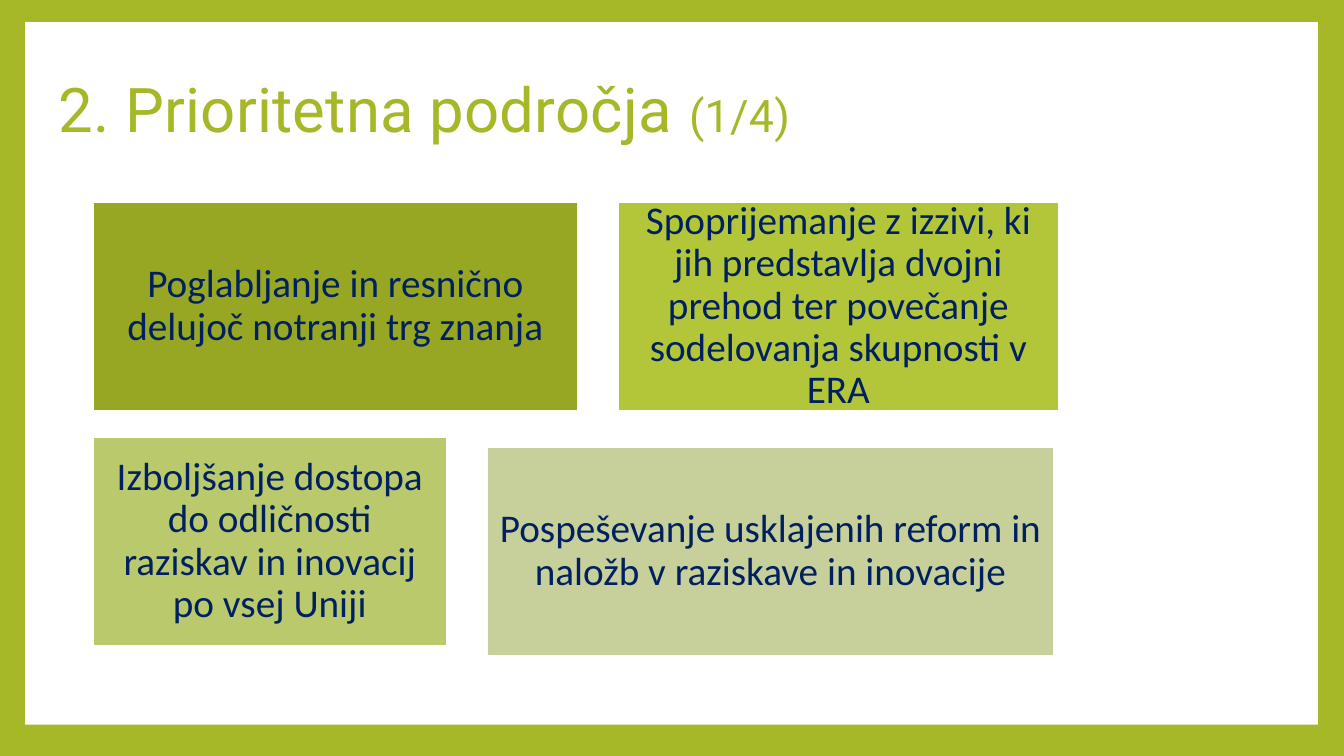
from pptx import Presentation
from pptx.dml.color import RGBColor
from pptx.enum.shapes import MSO_SHAPE
from pptx.enum.text import MSO_ANCHOR, MSO_AUTO_SIZE, PP_ALIGN
from pptx.util import Inches, Pt

COLORS = {
    "lime": "A6B727",
    "white": "FFFFFF",
    "navy": "002060",
    "olive": "97A623",
    "bright": "B3C639",
    "soft": "BAC96C",
    "pale": "C7D09A",
}
TITLE = [("2. Prioritetna področja ", 44), ("(1/4)", 32)]
AREA_HEIGHT = 2.08
AREAS = [
    ("Poglabljanje in resnično delujoč notranji trg znanja", "olive", 0.92, 2, 4.81),
    ("Spoprijemanje z izzivi, ki jih predstavlja dvojni prehod ter povečanje "
     "sodelovanja skupnosti v ERA", "bright", 6.13, 2, 4.37),
    ("Izboljšanje dostopa do odličnosti raziskav in inovacij po vsej Uniji",
     "soft", 0.92, 4.33, 3.51),
    ("Pospeševanje usklajenih reform in naložb v raziskave in inovacije",
     "pale", 4.83, 4.43, 5.62),
]


def color(name):
    return RGBColor.from_string(COLORS[name])


def write(frame, runs, *, font, ink, align, margins, line_spacing=1.0, tracking=None):
    frame.word_wrap = True
    frame.vertical_anchor = MSO_ANCHOR.MIDDLE
    (frame.margin_left, frame.margin_top,
     frame.margin_right, frame.margin_bottom) = map(Inches, margins)
    paragraph = frame.paragraphs[0]
    paragraph.alignment = align
    paragraph.line_spacing = line_spacing
    for text, size in runs:
        run = paragraph.add_run()
        run.text = text
        run.font.name = font
        run.font.size = Pt(size)
        run.font.color.rgb = color(ink)
        if tracking:
            run.font._element.set("spc", str(tracking))


def add_rectangle(slide, left, top, width, height, fill):
    rectangle = slide.shapes.add_shape(
        MSO_SHAPE.RECTANGLE, Inches(left), Inches(top), Inches(width), Inches(height))
    rectangle.shadow.inherit = False
    rectangle.fill.solid()
    rectangle.fill.fore_color.rgb = color(fill)
    rectangle.line.color.rgb = color("white")
    rectangle.line.width = Pt(1.5)
    return rectangle


def main():
    deck = Presentation()
    deck.slide_width, deck.slide_height = Inches(13.33), Inches(7.5)
    slide = deck.slides.add_slide(deck.slide_layouts[5])
    slide.background.fill.solid()
    slide.background.fill.fore_color.rgb = color("lime")

    title = slide.shapes.title
    title.left, title.top = Inches(0.58), Inches(0.69)
    title.width, title.height = Inches(9.67), Inches(0.76)
    write(title.text_frame, TITLE, font="Roboto", ink="lime", align=PP_ALIGN.LEFT,
          margins=(0, 0.01, 0, 0), tracking=20)
    title.text_frame.auto_size = MSO_AUTO_SIZE.SHAPE_TO_FIT_TEXT

    panel = add_rectangle(slide, 0.25, 0.22, 12.82, 6.97, "white")
    panel.line.fill.background()
    title._element.addprevious(panel._element)

    for text, fill, left, top, width in AREAS:
        area = add_rectangle(slide, left, top, width, AREA_HEIGHT, fill)
        write(area.text_frame, [(text, 28)], font="Calibri", ink="navy",
              align=PP_ALIGN.CENTER, margins=(0.12,) * 4, line_spacing=0.9)

    deck.save("out.pptx")


if __name__ == "__main__":
    main()
